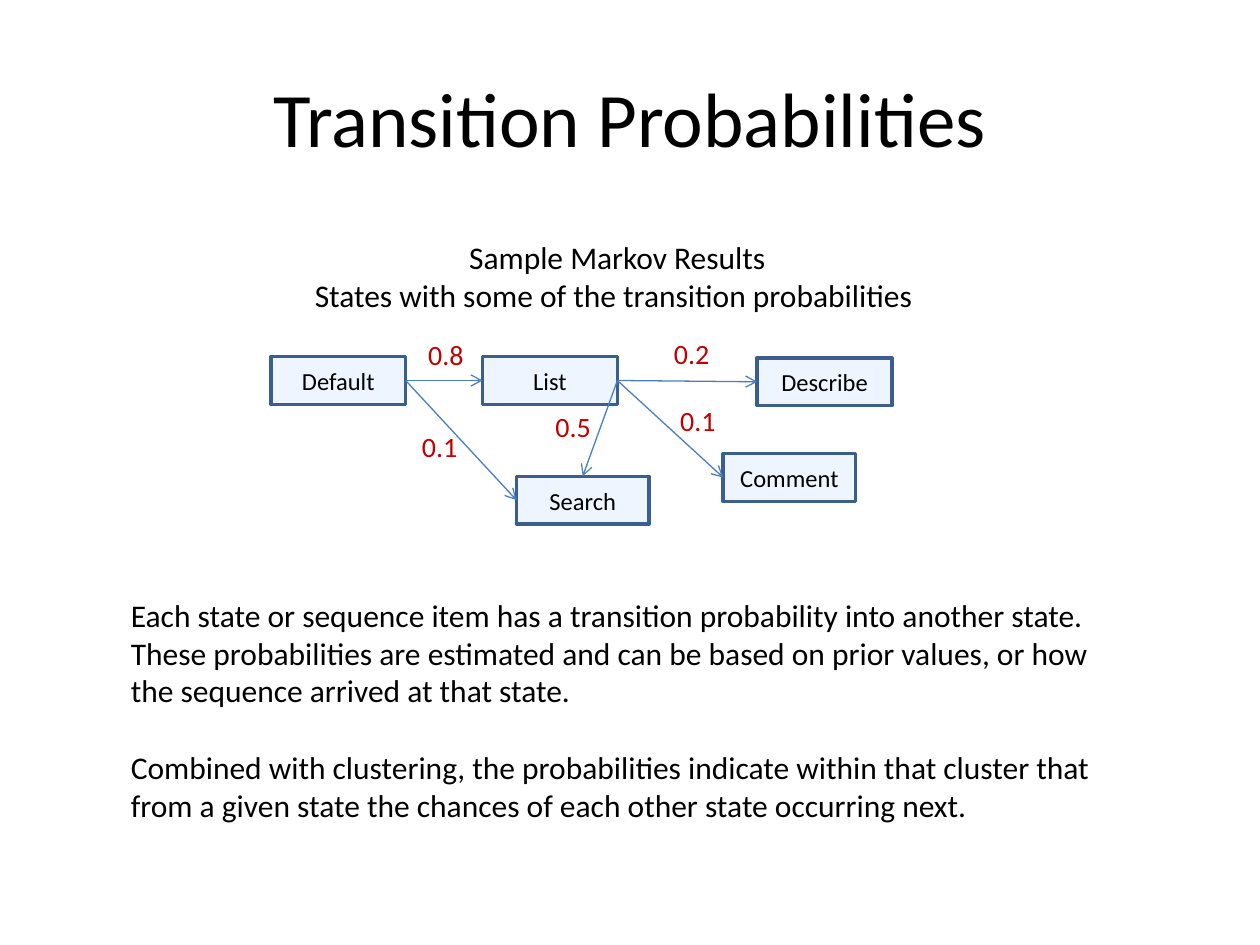
"""Build a slide on transition probabilities between Markov states."""
from lxml.etree import SubElement
from pptx import Presentation
from pptx.dml.color import RGBColor
from pptx.enum.shapes import MSO_CONNECTOR, MSO_SHAPE
from pptx.enum.text import MSO_ANCHOR, PP_ALIGN
from pptx.oxml.ns import qn
from pptx.util import Inches, Pt


def color(code):
    return RGBColor.from_string(code)


def write(shape, text, size=18, ink="000000", align=PP_ALIGN.LEFT,
          anchor=MSO_ANCHOR.TOP, wrap=True, gap=0):
    frame = shape.text_frame
    frame.text = text
    frame.word_wrap = wrap
    frame.vertical_anchor = anchor
    for para in frame.paragraphs:
        para.alignment = align
        para.font.name = "Calibri"
        para.font.size = Pt(size)
        para.font.color.rgb = color(ink)
    frame.paragraphs[-1].space_before = Pt(gap)
    return frame


deck = Presentation()
deck.slide_width, deck.slide_height = Inches(10), Inches(7.5)
slide = deck.slides.add_slide(deck.slide_layouts[5])
shapes = slide.shapes
center, middle = PP_ALIGN.CENTER, MSO_ANCHOR.MIDDLE

title = shapes.title
title.left, title.top = Inches(0.5), Inches(0.3)
title.width, title.height = Inches(9), Inches(1.25)
write(title, "Transition Probabilities", size=44, align=center, anchor=middle)

states = {}
for name, left, top, width in [
    ("Describe", 6.01, 2.84, 1.07),
    ("Comment", 5.74, 3.6, 1.05),
    ("Search", 4.1, 3.78, 1.05),
    ("List", 3.83, 2.83, 1.07),
    ("Default", 2.15, 2.83, 1.07),
]:
    state = shapes.add_shape(MSO_SHAPE.RECTANGLE, Inches(left), Inches(top),
                             Inches(width), Inches(0.38))
    state.shadow.inherit = False
    state.fill.solid()
    state.fill.fore_color.rgb = color("EFF5FF")
    state.line.color.rgb = color("3A5F8C")
    state.line.width = Pt(2)
    write(state, name, size=14, align=center, anchor=middle)
    states[name] = state

top_side, left_side, right_side = 0, 1, 3
for start, end, side, chance, left, top in [
    ("Default", "List", left_side, "0.8", 3.3, 2.63),
    ("Default", "Search", left_side, "0.1", 3.25, 3.36),
    ("List", "Describe", left_side, "0.2", 5.25, 2.62),
    ("List", "Comment", left_side, "0.1", 5.3, 3.15),
    ("List", "Search", top_side, "0.5", 4.31, 3.2),
]:
    arrow = shapes.add_connector(MSO_CONNECTOR.STRAIGHT, 0, 0, 0, 0)
    arrow.begin_connect(states[start], right_side)
    arrow.end_connect(states[end], side)
    arrow.line.color.rgb = color("4B7EBC")
    arrow.line.width = Pt(0.75)
    SubElement(arrow.line._get_or_add_ln(), qn("a:tailEnd"), type="arrow")
    SubElement(arrow._element.spPr, qn("a:effectLst"))
    label = shapes.add_textbox(Inches(left), Inches(top), Inches(0.49), Inches(0.37))
    write(label, chance, size=16, ink="C00000", wrap=False)

head = shapes.add_textbox(Inches(2.4), Inches(1.84), Inches(5), Inches(0.71))
frame = write(head, "Sample Markov Results\n"
              "States with some of the transition probabilities", wrap=False)
frame.paragraphs[0].alignment = center

body = shapes.add_textbox(Inches(0.94), Inches(4.68), Inches(7.94), Inches(1.92))
write(body, "Each state or sequence item has a transition probability into another state.\n"
      "These probabilities are estimated and can be based on prior values, "
      "or how the sequence arrived at that state.\n"
      "Combined with clustering, the probabilities indicate within that cluster "
      "that from a given state the chances of each other state occurring next.", gap=22)

deck.save("out.pptx")
